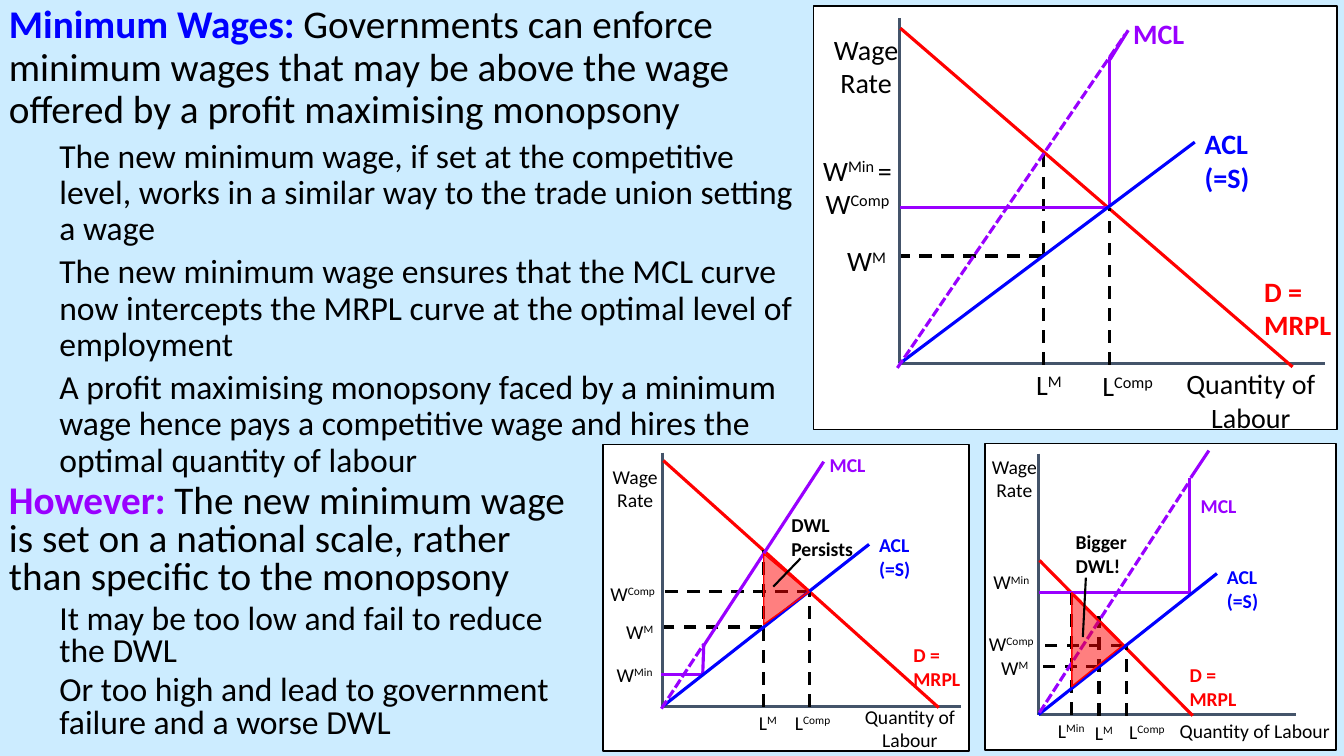
from dataclasses import dataclass
from typing import Any, NamedTuple

from lxml import etree
from pptx import Presentation
from pptx import util as u
from pptx.dml import color
from pptx.enum import dml, shapes, text
from pptx.oxml import ns

SCALE = 9144  # EMU in one px, at 100 px to the inch


@dataclass(frozen=True)
class Theme:
    font: str = "Calibri"
    back: str = "CCECFF"
    paper: str = "FFFFFF"
    ink: str = "000000"
    axis: str = "44546A"
    blue: str = "0000FF"
    violet: str = "9900FF"
    red: str = "FF0000"
    head: int = 28
    body: int = 24
    large: int = 20
    small: int = 14
    curve: float = 2.25
    thin: float = 1.5
    edge: float = 1


T = Theme()
DASH = dml.MSO_LINE.DASH
DOTS = dml.MSO_LINE.SQUARE_DOT


class Box(NamedTuple):
    x: int
    y: int
    w: int
    h: int


class Line(NamedTuple):
    x1: int
    y1: int
    x2: int
    y2: int
    hue: str
    dash: Any = None
    weight: float = T.curve


class Label(NamedTuple):
    words: str  # a ^ switches superscript on and off
    box: Box
    hue: str = T.ink
    key: bool = False  # bold and left-aligned


class Wedge(NamedTuple):
    box: Box
    tip: float


@dataclass(frozen=True)
class Graph:
    frame: Box
    size: int
    labels: list[Label]
    lines: list[Line]
    wedge: Wedge | None = None
    notes: tuple[Label, ...] = ()
    hints: tuple[Line, ...] = ()


@dataclass(frozen=True)
class Panel:
    box: Box
    lead: str
    hue: str
    rest: str
    points: list[str]
    gap: float


def px(n: int) -> u.Emu:
    return u.Emu(n * SCALE)


def rgb(hue: str) -> color.RGBColor:
    return color.RGBColor.from_string(hue)


def add_run(par: Any, words: str, *, size: int, hue: str = T.ink, bold: bool = False) -> None:
    for i, part in enumerate(words.split("^")):
        if not part:
            continue
        run = par.add_run()
        run.text = part
        run.font.name, run.font.size, run.font.bold = T.font, u.Pt(size), bold
        run.font.color.rgb = rgb(hue)
        if i % 2:
            run.font._element.set("baseline", "30000")


def add_frame(tree: Any, box: Box) -> Any:
    frame = tree.add_textbox(*map(px, box)).text_frame
    frame.word_wrap = True
    return frame


def add_label(tree: Any, label: Label, size: int) -> None:
    frame = add_frame(tree, label.box)
    frame.auto_size = text.MSO_AUTO_SIZE.SHAPE_TO_FIT_TEXT
    par = frame.paragraphs[0]
    par.alignment = text.PP_ALIGN.LEFT if label.key else text.PP_ALIGN.CENTER
    add_run(par, label.words, size=size, hue=label.hue, bold=label.key)


def add_line(tree: Any, line: Line) -> None:
    ends = map(px, line[:4])
    link = tree.add_connector(shapes.MSO_CONNECTOR.STRAIGHT, *ends)
    link.line.color.rgb = rgb(line.hue)
    link.line.width = u.Pt(line.weight)
    if line.dash is not None:
        link.line.dash_style = line.dash
    etree.SubElement(link._element.spPr, ns.qn("a:effectLst"))


def add_shape(tree: Any, kind: Any, box: Box, fill: str, edge: str) -> Any:
    shape = tree.add_shape(kind, *map(px, box))
    shape.shadow.inherit = False
    shape.fill.solid()
    shape.fill.fore_color.rgb = rgb(fill)
    shape.line.color.rgb = rgb(edge)
    shape.line.width = u.Pt(T.edge)
    return shape


def add_wedge(tree: Any, wedge: Wedge) -> None:
    shape = add_shape(tree, shapes.MSO_SHAPE.ISOSCELES_TRIANGLE, wedge.box, T.red, T.red)
    shape.rotation = 90
    shape.adjustments[0] = wedge.tip
    tint = shape._element.spPr.find(ns.qn("a:solidFill"))[0]
    etree.SubElement(tint, ns.qn("a:alpha"), val="50000")


def add_graph(slide: Any, graph: Graph) -> None:
    tree = slide.shapes.add_group_shape().shapes
    add_shape(tree, shapes.MSO_SHAPE.RECTANGLE, graph.frame, T.paper, T.ink)
    for label in graph.labels:
        add_label(tree, label, graph.size)
    for line in graph.lines:
        add_line(tree, line)
    if graph.wedge:
        add_wedge(tree, graph.wedge)
    for hint in graph.hints:
        add_line(tree, hint)
    for note in graph.notes:
        add_label(tree, note, graph.size)


def add_panel(slide: Any, panel: Panel) -> None:
    frame = add_frame(slide.shapes, panel.box)
    par = frame.paragraphs[0]
    par.space_before, par.line_spacing = u.Pt(10), panel.gap
    add_run(par, panel.lead, size=T.head, hue=panel.hue, bold=True)
    add_run(par, panel.rest, size=T.head)
    for point in panel.points:
        par = frame.add_paragraph()
        par.level, par.space_before, par.line_spacing = 1, u.Pt(5), panel.gap
        props = par._p.get_or_add_pPr()
        props.set("marL", str(px(50)))
        props.set("indent", "0")
        add_run(par, point, size=T.body)


# Text panels
POLICY = Panel(
    Box(-1, 0, 811, 508), "Minimum Wages: ", T.blue,
    "Governments can enforce minimum wages that may be above the wage offered by a profit maximising monopsony",
    ["The new minimum wage, if set at the competitive level, works in a similar way to the trade union setting a wage",
     "The new minimum wage ensures that the MCL curve now intercepts the MRPL curve at the optimal level of employment",
     "A profit maximising monopsony faced by a minimum wage hence pays a competitive wage and hires the optimal quantity of labour"],
    0.9)
LIMITS = Panel(
    Box(-1, 476, 592, 283), "However: ", T.violet,
    "The new minimum wage is set on a national scale, rather than specific to the monopsony",
    ["It may be too low and fail to reduce the DWL",
     "Or too high and lead to government failure and a worse DWL"],
    0.8)


def name_parts(qty: Box, wage: Box, acl: Box, mcl: Box, mrpl: Box, lm: Box, wm: Box, lcomp: Box) -> list[Label]:
    """Labels that every graph carries."""
    return [Label("Quantity of Labour", qty), Label("Wage Rate", wage),
            Label("ACL (=S)", acl, T.blue, True), Label("MCL", mcl, T.violet, True),
            Label("D = MRPL", mrpl, T.red, True), Label("L^M", lm),
            Label("W^M", wm), Label("L^Comp", lcomp)]


# Minimum wage at the competitive level
IDEAL = Graph(
    Box(807, 6, 519, 420), T.large,
    name_parts(Box(1156, 359, 169, 72), Box(812, 27, 94, 60), Box(1185, 121, 110, 39),
               Box(1114, 11, 82, 34), Box(1244, 267, 111, 34), Box(1004, 360, 73, 34),
               Box(823, 237, 73, 34), Box(1076, 361, 85, 41))
    + [Label("W^Min ^= W^Comp", Box(791, 147, 119, 91))],
    [Line(892, 18, 892, 360, T.axis), Line(892, 361, 1314, 361, T.axis),
     Line(893, 28, 1282, 364, T.red),
     Line(1035, 362, 1035, 150, T.ink, DASH), Line(1033, 254, 894, 254, T.ink, DASH),
     Line(1099, 206, 893, 206, T.violet), Line(1100, 362, 1100, 206, T.ink, DASH),
     Line(1100, 57, 1100, 204, T.violet), Line(892, 361, 1185, 141, T.blue),
     Line(890, 365, 1116, 34, T.violet, DOTS), Line(1101, 59, 1119, 30, T.violet)])

# Minimum wage too low
LOW = Graph(
    Box(598, 441, 363, 304), T.small,
    name_parts(Box(844, 694, 117, 54), Box(597, 456, 66, 39), Box(862, 524, 77, 23),
               Box(813, 444, 58, 23), Box(896, 633, 78, 23), Box(736, 700, 51, 23),
               Box(609, 610, 51, 23), Box(774, 700, 64, 32))
    + [Label("W^Comp", Box(586, 572, 83, 34)), Label("W^Min", Box(588, 653, 83, 23))],
    [Line(657, 449, 657, 700, T.axis), Line(657, 701, 953, 701, T.axis),
     Line(658, 457, 931, 702, T.red),
     Line(757, 701, 757, 546, T.ink, DASH), Line(756, 622, 659, 622, T.ink, DASH),
     Line(698, 669, 656, 669, T.violet), Line(803, 701, 803, 587, T.ink, DASH),
     Line(698, 640, 697, 669, T.violet), Line(803, 587, 656, 587, T.ink, DASH),
     Line(657, 701, 862, 540, T.blue), Line(656, 703, 698, 639, T.violet, DOTS),
     Line(697, 642, 817, 458, T.violet)],
    Wedge(Box(745, 562, 70, 45), 0.54),
    (Label("DWL Persists", Box(775, 504, 85, 54), key=True),),
    (Line(767, 582, 794, 554, T.ink, weight=T.thin),))

# Minimum wage too high
HIGH = Graph(
    Box(977, 440, 348, 304), T.small,
    name_parts(Box(1150, 708, 189, 34), Box(970, 446, 72, 57), Box(1207, 556, 67, 57),
               Box(1181, 485, 67, 34), Box(1170, 653, 67, 57), Box(1073, 710, 44, 34),
               Box(981, 646, 51, 34), Box(1105, 709, 65, 34))
    + [Label("W^Comp", Box(967, 622, 72, 49)), Label("W^Min", Box(967, 561, 72, 34)),
       Label("L^Min", Box(1037, 708, 51, 34))],
    [Line(1030, 450, 1030, 709, T.axis), Line(1030, 709, 1285, 709, T.axis),
     Line(1031, 556, 1183, 710, T.red),
     Line(1117, 710, 1117, 640, T.ink, DASH), Line(1090, 661, 1031, 661, T.ink, DASH),
     Line(1180, 588, 1030, 588, T.violet), Line(1090, 710, 1090, 611, T.ink, DASH),
     Line(1180, 474, 1180, 588, T.violet), Line(1114, 640, 1030, 640, T.ink, DASH),
     Line(1063, 709, 1063, 588, T.ink, DASH), Line(1030, 709, 1207, 569, T.blue),
     Line(1199, 447, 1181, 474, T.violet), Line(1031, 707, 1180, 477, T.violet, DOTS)],
    Wedge(Box(1042, 609, 93, 51), 0.56),
    (Label("Bigger DWL!", Box(1057, 521, 73, 57), key=True),),
    (Line(1074, 632, 1077, 573, T.ink, weight=T.thin),))


def main() -> None:
    deck = Presentation()
    deck.slide_width, deck.slide_height = px(1333), px(750)
    slide = deck.slides.add_slide(deck.slide_layouts[6])
    slide.background.fill.solid()
    slide.background.fill.fore_color.rgb = rgb(T.back)
    add_panel(slide, POLICY)
    add_graph(slide, IDEAL)
    add_panel(slide, LIMITS)
    add_graph(slide, LOW)
    add_graph(slide, HIGH)
    deck.save("out.pptx")


if __name__ == "__main__":
    main()
